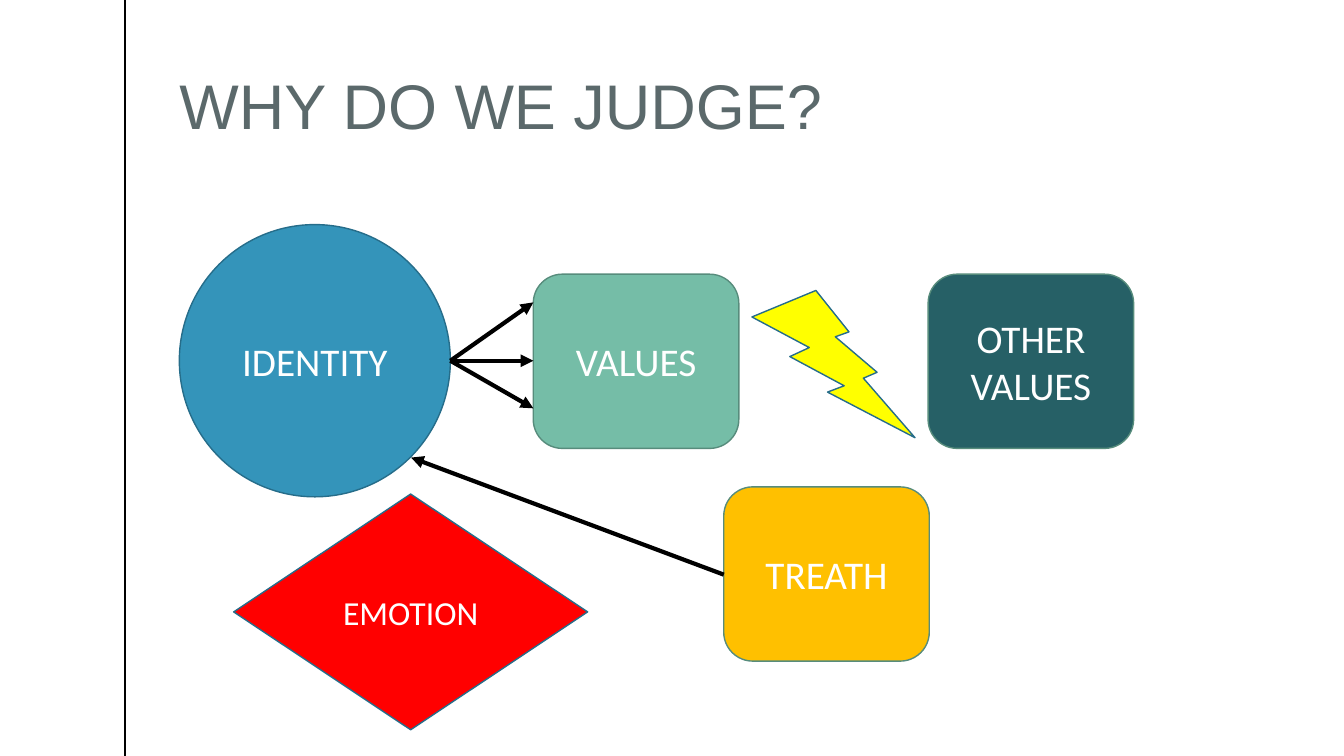
from dataclasses import dataclass

from lxml import etree
from pptx import Presentation
from pptx.dml.color import RGBColor
from pptx.enum import shapes, text
from pptx.oxml import ns
from pptx.util import Cm, Pt

SHAPE = shapes.MSO_SHAPE


@dataclass(frozen=True)
class Theme:
    heading_font: str = "Arial"
    body_font: str = "Calibri"
    title_size: int = 45
    label_size: int = 28
    small_size: int = 24
    thin: float = 1
    thick: float = 3
    heading: str = "5B696B"
    white: str = "FFFFFF"
    black: str = "000000"
    blue: str = "3494BA"
    blue_edge: str = "266D8A"
    green: str = "75BDA7"
    green_edge: str = "578C7C"
    teal: str = "266066"
    yellow: str = "FFFF00"
    amber: str = "FFC000"
    red: str = "FF0000"


def write(frame, words, *, font, size, color, align, anchor, spacing=1.0):
    frame.word_wrap = True
    frame.auto_size = text.MSO_AUTO_SIZE.NONE
    frame.vertical_anchor = anchor
    para = frame.paragraphs[0]
    para.alignment = align
    para.line_spacing = spacing
    span = para.add_run()
    span.text = words
    span.font.name = font
    span.font.size = Pt(size)
    span.font.color.rgb = RGBColor.from_string(color)


class Painter:
    """Draws on one page in one theme; all lengths are centimetres."""

    def __init__(self, page, theme):
        self.page = page
        self.theme = theme

    def title(self, words, left, top, width, height):
        box = self.page.shapes.title
        box.left, box.top, box.width, box.height = map(Cm, (left, top, width, height))
        frame = box.text_frame
        frame.margin_left = frame.margin_right = 0
        write(frame, words, font=self.theme.heading_font,
              size=self.theme.title_size, color=self.theme.heading,
              align=text.PP_ALIGN.LEFT, anchor=text.MSO_ANCHOR.BOTTOM, spacing=0.9)

    def shape(self, kind, left, top, width, height, fill, edge, words="", size=None):
        box = self.page.shapes.add_shape(kind, *map(Cm, (left, top, width, height)))
        box.shadow.inherit = False
        box.fill.solid()
        box.fill.fore_color.rgb = RGBColor.from_string(fill)
        box.line.color.rgb = RGBColor.from_string(edge)
        box.line.width = Pt(self.theme.thin)
        if words:
            write(box.text_frame, words, font=self.theme.body_font,
                  size=size or self.theme.label_size, color=self.theme.white,
                  align=text.PP_ALIGN.CENTER, anchor=text.MSO_ANCHOR.MIDDLE)

    def card(self, words, left, top, fill):
        self.shape(SHAPE.ROUNDED_RECTANGLE, left, top, 5.18, 4.39,
                   fill, self.theme.green_edge, words)

    def line(self, start, end, width):
        link = self.page.shapes.add_connector(
            shapes.MSO_CONNECTOR.STRAIGHT, *map(Cm, (*start, *end)))
        link.line.color.rgb = RGBColor.from_string(self.theme.black)
        link.line.width = Pt(width)
        etree.SubElement(link._element.spPr, ns.qn("a:effectLst"))
        return link

    def arrow(self, start, end):
        link = self.line(start, end, self.theme.thick)
        etree.SubElement(link.line._get_or_add_ln(), ns.qn("a:tailEnd"), type="triangle")


def main():
    deck = Presentation()
    deck.slide_width, deck.slide_height = Cm(33.87), Cm(19.05)
    title_only = deck.slide_layouts[5]
    theme = Theme()
    painter = Painter(deck.slides.add_slide(title_only), theme)

    painter.line((3.15, 0), (3.15, 19.05), theme.thin)
    painter.title("WHY DO WE JUDGE?", 4.52, 0.94, 28.14, 2.79)

    painter.shape(SHAPE.OVAL, 4.52, 5.66, 6.83, 6.86,
                  theme.blue, theme.blue_edge, "IDENTITY")
    painter.card("VALUES", 13.44, 6.91, theme.green)
    for target in (7.62, 9.09, 10.29):
        painter.arrow((11.35, 9.09), (13.44, target))

    painter.card("OTHER VALUES", 23.39, 6.91, theme.teal)
    painter.shape(SHAPE.LIGHTNING_BOLT, 18.95, 7.32, 4.11, 3.71,
                  theme.yellow, theme.blue_edge)
    painter.card("TREATH", 18.24, 12.27, theme.amber)
    painter.arrow((18.24, 14.48), (10.36, 11.53))
    painter.shape(SHAPE.DIAMOND, 5.89, 12.45, 8.92, 5.94,
                  theme.red, theme.blue_edge, "EMOTION", theme.small_size)

    deck.save("out.pptx")


if __name__ == "__main__":
    main()
